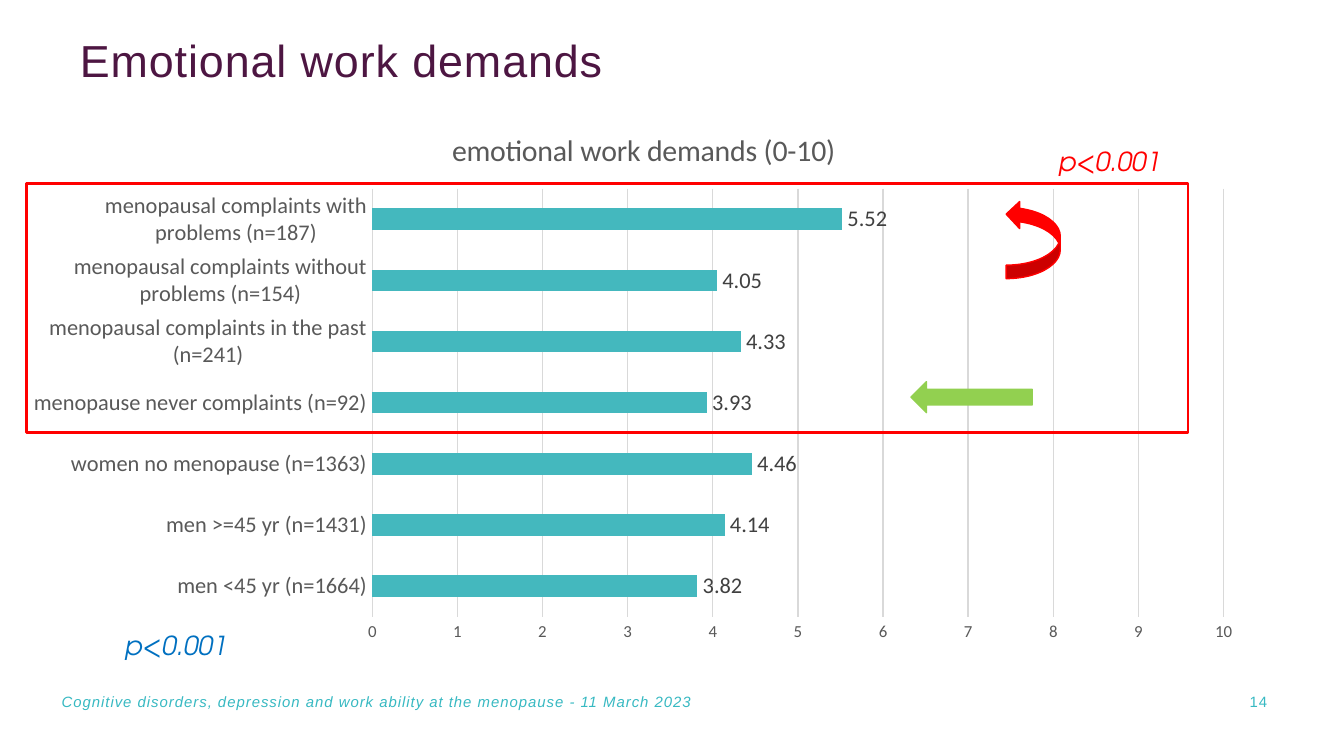
from lxml import etree
from pptx import Presentation
from pptx.chart.data import CategoryChartData
from pptx.dml.color import RGBColor
from pptx.enum.chart import XL_CHART_TYPE, XL_LABEL_POSITION, XL_TICK_MARK
from pptx.enum.shapes import MSO_SHAPE
from pptx.enum.text import MSO_ANCHOR, MSO_AUTO_SIZE, PP_ALIGN
from pptx.oxml.ns import qn
from pptx.util import Pt

BAR = XL_CHART_TYPE.BAR_CLUSTERED
OUT_END = XL_LABEL_POSITION.OUTSIDE_END
NO_TICK = XL_TICK_MARK.NONE
RECT, CURVE, ARROW = MSO_SHAPE.RECTANGLE, MSO_SHAPE.CURVED_LEFT_ARROW, MSO_SHAPE.LEFT_ARROW
TOP, MIDDLE = MSO_ANCHOR.TOP, MSO_ANCHOR.MIDDLE
LEFT, RIGHT = PP_ALIGN.LEFT, PP_ALIGN.RIGHT
NO_FIT = MSO_AUTO_SIZE.NONE

PLUM, TEAL, AQUA = "4D1642", "37B9C2", "44B8BE"
RED, BLUE, GREEN = "FF0000", "0070C0", "92D050"
GREY, DARK, PALE = "595959", "404040", "D9D9D9"
SCORES = {
    "men <45 yr (n=1664)": 3.82,
    "men >=45 yr (n=1431)": 4.14,
    "women no menopause (n=1363)": 4.46,
    "menopause never complaints (n=92)": 3.93,
    "menopausal complaints in the past (n=241)": 4.33,
    "menopausal complaints without problems (n=154)": 4.05,
    "menopausal complaints with problems (n=187)": 5.52,
}


def rgb(code):
    """Turn a hex string into a colour."""
    return RGBColor.from_string(code)


def put(item, **values):
    """Set each given value on the item."""
    for name, value in values.items():
        setattr(item, name, value)


class Page:
    """Hold the style and the current slide."""

    sans, fancy, plain = "Arial", "TeX Gyre Adventor", "Calibri"

    def __init__(self, deck):
        """Start a slide with a title only."""
        self.slide = deck.slides.add_slide(deck.slide_layouts[5])

    def style(self, font, face, size, color, italic=False):
        """Format a font."""
        put(font, name=face, size=Pt(size), bold=False, italic=italic)
        font.color.rgb = rgb(color)

    def label(self, shape, text, face, size, color, italic=False,
              align=LEFT, anchor=TOP, inset=(0, 0), spacing=0, lead=1):
        """Fill a shape with one styled line."""
        frame = shape.text_frame
        side, edge = map(Pt, inset)
        put(frame, word_wrap=True, auto_size=NO_FIT, vertical_anchor=anchor,
            margin_left=side, margin_right=side, margin_top=edge, margin_bottom=edge)
        line = frame.paragraphs[0]
        put(line, alignment=align, line_spacing=lead)
        run = line.add_run()
        run.text = text
        self.style(run.font, face, size, color, italic)
        run._r.get_or_add_rPr().set("spc", str(spacing))

    def title(self, text, box):
        """Place and fill the title."""
        shape = self.slide.shapes.title
        put(shape, **dict(zip(("left", "top", "width", "height"), map(Pt, box))))
        self.label(shape, text, self.sans, 24, PLUM, spacing=50, lead=0.8)

    def note(self, text, box, *look, **more):
        """Add a text box."""
        self.label(self.slide.shapes.add_textbox(*map(Pt, box)), text, *look, **more)

    def shape(self, kind, box, color, width, solid=True, flip=False):
        """Add a shape with one colour."""
        shape = self.slide.shapes.add_shape(kind, *map(Pt, box))
        shape.shadow.inherit = False
        shape.line.color.rgb = rgb(color)
        shape.line.width = Pt(width)
        if solid:
            shape.fill.solid()
            shape.fill.fore_color.rgb = rgb(color)
        else:
            shape.fill.background()
        if flip:
            shape._element.spPr.find(qn("a:xfrm")).set("flipV", "1")

    def chart(self, name, scores, box):
        """Add the bar chart."""
        data = CategoryChartData()
        data.categories = list(scores)
        data.add_series(name, list(scores.values()))
        chart = self.slide.shapes.add_chart(BAR, *map(Pt, box), data).chart
        self.style(chart.font, self.plain, 10, "000000")
        put(chart, has_legend=False, has_title=True)
        head = chart.chart_title.text_frame
        head.text = name
        self.style(head.paragraphs[0].runs[0].font, self.plain, 16, GREY)

        for axis, size in ((chart.category_axis, 12), (chart.value_axis, 9)):
            put(axis, major_tick_mark=NO_TICK, minor_tick_mark=NO_TICK)
            self.style(axis.tick_labels.font, self.plain, size, GREY)
        axis = chart.value_axis
        put(axis, minimum_scale=0, maximum_scale=10, major_unit=1, has_major_gridlines=True)
        axis.format.line.fill.background()
        for part in (chart.category_axis, axis.major_gridlines):
            part.format.line.color.rgb = rgb(PALE)
            part.format.line.width = Pt(0.75)

        plot = chart.plots[0]
        put(plot, gap_width=182, vary_by_categories=False, has_data_labels=True)
        put(plot.data_labels, show_value=True, position=OUT_END)
        self.style(plot.data_labels.font, self.plain, 12, DARK)
        fill = plot.series[0].format.fill
        fill.solid()
        fill.fore_color.rgb = rgb(AQUA)
        self.fit(chart, x=0.28, y=0.15, w=0.69, h=0.78)

    def fit(self, chart, **parts):
        """Fix the inner plot area as parts of the chart."""
        area = chart._chartSpace.chart.plotArea
        for old in area.findall(qn("c:layout")):
            area.remove(old)
        layout = etree.Element(qn("c:layout"))
        manual = etree.SubElement(layout, qn("c:manualLayout"))
        values = {"layoutTarget": "inner", "xMode": "edge", "yMode": "edge", **parts}
        for name, value in values.items():
            etree.SubElement(manual, qn("c:" + name)).set("val", str(value))
        area.insert(0, layout)


def main():
    """Build the slide and save it."""
    deck = Presentation()
    put(deck, slide_width=Pt(720), slide_height=Pt(405))
    page = Page(deck)
    page.chart("emotional work demands (0-10)", SCORES, (14.4, 57, 661, 294))
    page.title("Emotional work demands", (42.8, 23, 531, 44))
    page.note("14", (567, 365, 119, 21.6), page.sans, 8, TEAL,
              align=RIGHT, anchor=MIDDLE, inset=(7.2, 3.6), spacing=50)
    for color, left, top in ((BLUE, 59.8, 333.4), (RED, 560, 74.2)):
        page.note("p<0.001", (left, top, 77, 24.5), page.fancy, 14, color, True,
                  inset=(7.2, 3.6))
    page.shape(RECT, (14.4, 98.5, 622, 133.2), RED, 1.5, solid=False)
    page.note("Cognitive disorders, depression and work ability at the menopause - 11 March 2023",
              (33, 365, 577, 21.6), page.sans, 8, TEAL, True, anchor=MIDDLE, spacing=50)
    page.shape(CURVE, (539, 107.5, 29, 41.8), RED, 0.75, flip=True)
    page.shape(ARROW, (488, 204.5, 65, 16.6), GREEN, 0.75)
    deck.save("out.pptx")


if __name__ == "__main__":
    main()
